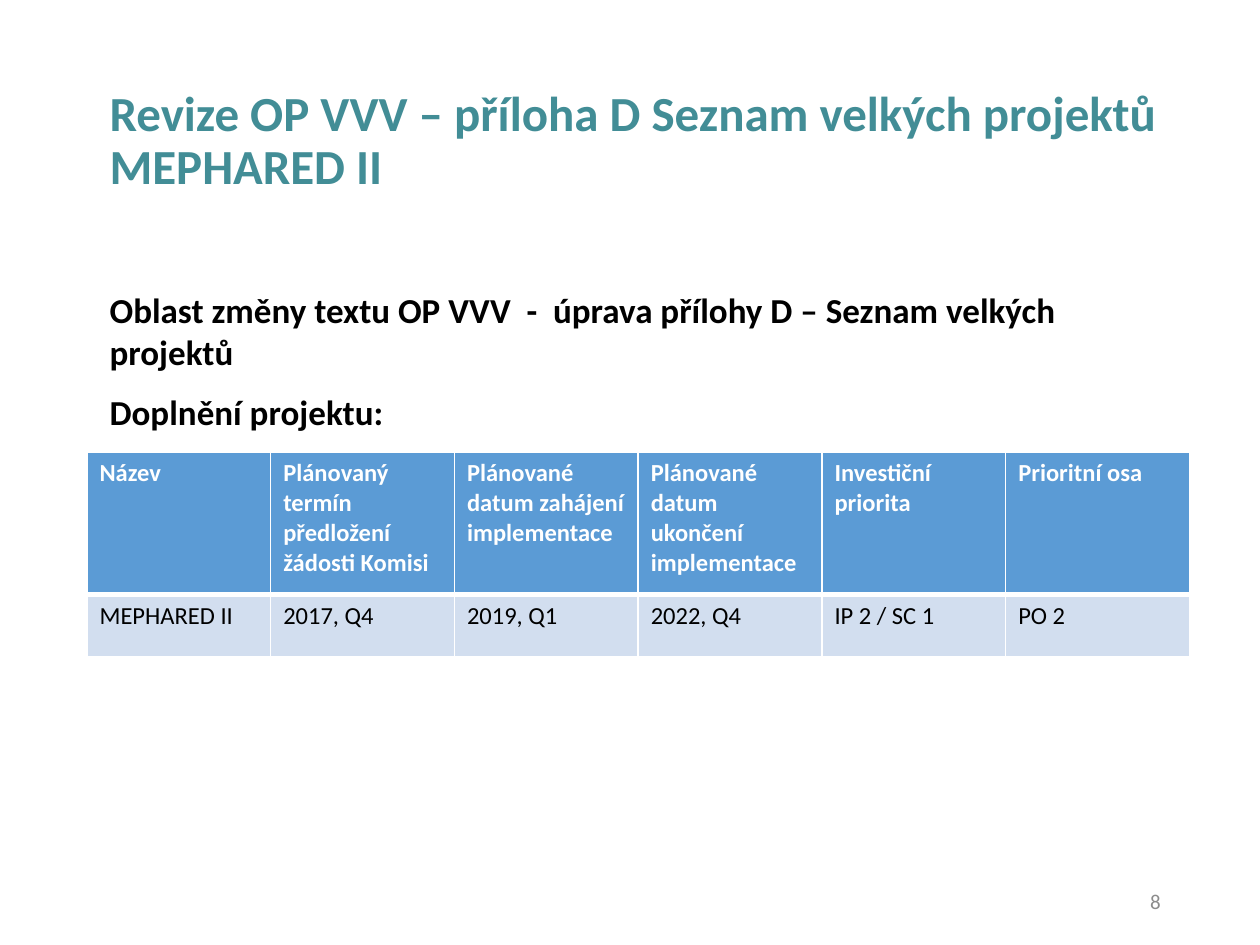
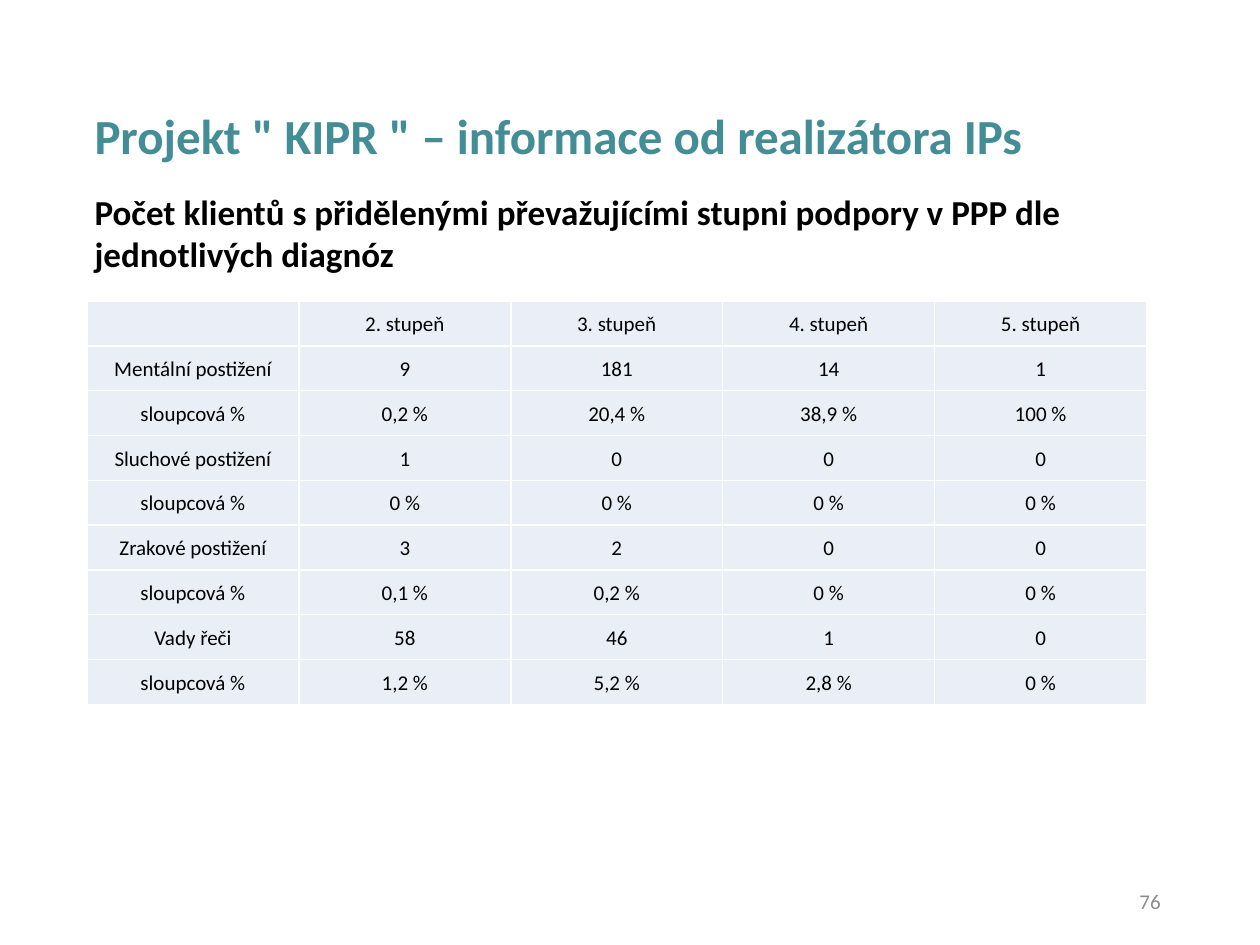
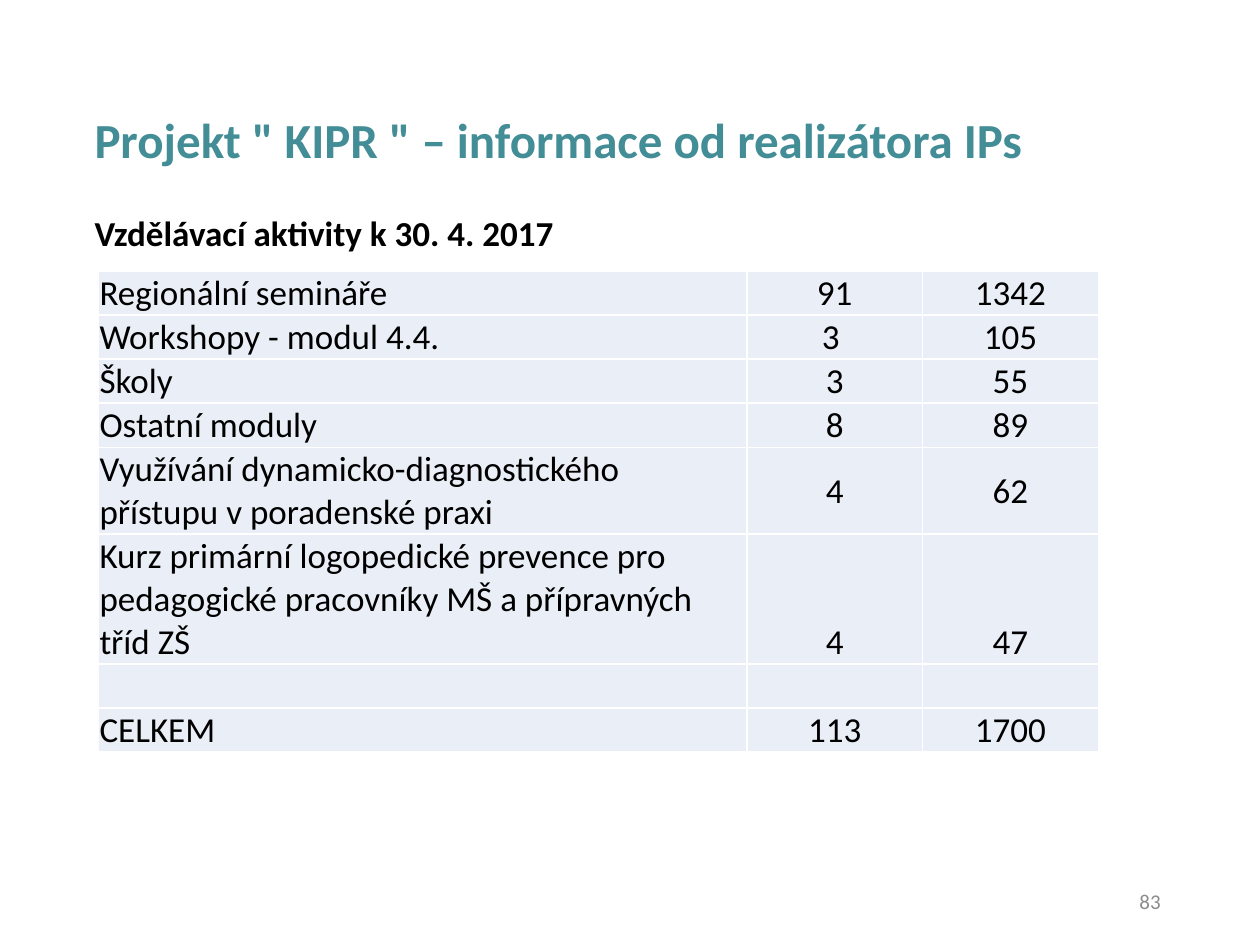
import pptx
import pptx.util
import pptx.dml.color
import pptx.enum.text
import pptx.oxml.ns
from lxml import etree

Inches = pptx.util.Inches
Pt = pptx.util.Pt
RGB = pptx.dml.color.RGBColor
ALIGN = pptx.enum.text.PP_ALIGN
ANCHOR = pptx.enum.text.MSO_ANCHOR
qn = pptx.oxml.ns.qn

FONT = "Calibri"
TEAL = RGB(0x42, 0x8D, 0x96)
GREY = RGB(0x8C, 0x8C, 0x8C)
BLACK = RGB(0, 0, 0)
WHITE = RGB(255, 255, 255)
BLUE = RGB(0x5B, 0x9B, 0xD5)
PALE = RGB(0xD2, 0xDE, 0xEF)
ICE = RGB(0xEA, 0xEF, 0xF7)

PLAN = [
    ["Název", "Plánovaný termín předložení žádosti Komisi",
     "Plánované datum zahájení implementace",
     "Plánované datum ukončení implementace",
     "Investiční priorita", "Prioritní osa"],
    ["MEPHARED II", "2017, Q4", "2019, Q1", "2022, Q4", "IP 2 / SC 1", "PO 2"],
]
SHARE = "sloupcová %"
COUNTS = [
    ["", "2. stupeň", "3. stupeň", "4. stupeň", "5. stupeň"],
    ["Mentální postižení", "9", "181", "14", "1"],
    [SHARE, "0,2 %", "20,4 %", "38,9 %", "100 %"],
    ["Sluchové postižení", "1", "0", "0", "0"],
    [SHARE, "0 %", "0 %", "0 %", "0 %"],
    ["Zrakové postižení", "3", "2", "0", "0"],
    [SHARE, "0,1 %", "0,2 %", "0 %", "0 %"],
    ["Vady řeči", "58", "46", "1", "0"],
    [SHARE, "1,2 %", "5,2 %", "2,8 %", "0 %"],
]
COURSES = [
    ["Regionální semináře", "91", "1342"],
    ["Workshopy - modul 4.4.", "3 ", "105"],
    ["Školy", "3", "55"],
    ["Ostatní moduly", "8", "89"],
    ["Využívání dynamicko-diagnostického přístupu v poradenské praxi", "4", "62"],
    ["Kurz primární logopedické prevence pro pedagogické pracovníky MŠ "
     "a přípravných tříd ZŠ", "4", "47"],
    ["", "", ""],
    ["CELKEM", "113", "1700"],
]
KIPR = 'Projekt " KIPR " – informace od realizátora IPs'

PAGES = [
    dict(title="Revize OP VVV – příloha D Seznam velkých projektů MEPHARED II",
         place=(0.81, 0.64, 8.5, 0.98), number="8",
         body=["Oblast změny textu OP VVV  -  úprava přílohy D – Seznam velkých projektů",
               "Doplnění projektu:"],
         area=(0.81, 2.23, 8.62, 4.52),
         grid=dict(data=PLAN, left=0.69, top=3.59, cols=[8.75 / 6] * 6,
                   rows=[1.13, 0.49], size=14, head=True, fill=PALE)),
    dict(title=KIPR, place=(0.69, 0.61, 8.62, 0.98), number="76",
         body=["Počet klientů s přidělenými převažujícími stupni podpory v PPP dle "
               "jednotlivých diagnóz"],
         area=(0.69, 1.45, 8.62, 4.52),
         grid=dict(data=COUNTS, left=0.69, top=2.39, cols=[8.41 / 5] * 5,
                   rows=[3.2 / 9] * 9, size=12, pads=(0.07,) * 4, lead=1.07,
                   aligns=[ALIGN.CENTER] * 5, anchor=ANCHOR.MIDDLE)),
    dict(title=KIPR, place=(0.69, 0.64, 8.62, 0.98), number="83",
         body=["Vzdělávací aktivity k 30. 4. 2017"],
         area=(0.69, 1.62, 8.62, 4.52),
         grid=dict(data=COURSES, left=0.78, top=2.15, cols=[5.15, 1.39, 1.4],
                   rows=[0.35] * 4 + [0.69, 1.03] + [0.35] * 2, size=20,
                   pads=(0.01, 0.01, 0.01, 0), anchor=ANCHOR.BOTTOM,
                   aligns=[ALIGN.LEFT, ALIGN.CENTER, ALIGN.CENTER],
                   middle={(4, 1), (4, 2), (5, 0)})),
]


def write(frame, *lines, size=20, color=BLACK, bold=False, align=ALIGN.LEFT,
          lead=1.0, gap=0):
    frame.word_wrap = True
    for i, line in enumerate(lines):
        para = frame.add_paragraph() if i else frame.paragraphs[0]
        para.alignment = align
        para.line_spacing = lead
        para.space_before = Pt(gap if i else 0)
        if not line:
            etree.SubElement(para._p, qn("a:endParaRPr"), sz=str(size * 100))
            continue
        run = para.add_run()
        run.text = line
        font = run.font
        font.name, font.size, font.bold = FONT, Pt(size), bold
        font.color.rgb = color


def inset(item, pads):
    (item.margin_left, item.margin_top,
     item.margin_right, item.margin_bottom) = map(Inches, pads)


def border(cell, base):
    props = cell._tc.get_or_add_tcPr()
    for side, width in zip("LRTB", (1, 1, 1, base)):
        line = etree.SubElement(props, qn("a:ln" + side), w=str(Pt(width)))
        fill = etree.SubElement(line, qn("a:solidFill"))
        etree.SubElement(fill, qn("a:srgbClr"), val=str(WHITE))


def tabulate(slide, data, left, top, cols, rows, size, head=False, fill=ICE,
             pads=(0.1, 0.05, 0.1, 0.05), lead=1.0, aligns=None,
             anchor=ANCHOR.TOP, middle=()):
    box = map(Inches, (left, top, sum(cols), sum(rows)))
    table = slide.shapes.add_table(len(rows), len(cols), *box).table
    table.first_row = head
    table.horz_banding = False
    for col, width in zip(table.columns, cols):
        col.width = Inches(width)
    for r, (row, high) in enumerate(zip(data, rows)):
        table.rows[r].height = Inches(high)
        top_row = head and r == 0
        for c, text in enumerate(row):
            cell = table.cell(r, c)
            border(cell, 3 if top_row else 1)
            cell.fill.solid()
            cell.fill.fore_color.rgb = BLUE if top_row else fill
            inset(cell, pads)
            cell.vertical_anchor = ANCHOR.MIDDLE if (r, c) in middle else anchor
            write(cell.text_frame, text, size=size, lead=lead, bold=top_row,
                  color=WHITE if top_row else BLACK,
                  align=aligns[c] if aligns else ALIGN.LEFT)


def build(deck, page):
    slide = deck.slides.add_slide(deck.slide_layouts[5])
    title = slide.shapes.title
    title.left, title.top, title.width, title.height = map(Inches, page["place"])
    frame = title.text_frame
    frame.auto_size = pptx.enum.text.MSO_AUTO_SIZE.NONE
    frame.vertical_anchor = ANCHOR.MIDDLE
    inset(frame, (0.06,) * 4)
    write(frame, page["title"], size=28, color=TEAL, bold=True, lead=0.9)

    body = slide.shapes.add_textbox(*map(Inches, page["area"])).text_frame
    inset(body, (0.06,) * 4)
    write(body, *page["body"], bold=True, gap=10)

    foot = slide.shapes.add_textbox(*map(Inches, (7.06, 6.95, 2.25, 0.4))).text_frame
    foot.vertical_anchor = ANCHOR.MIDDLE
    write(foot, page["number"], size=12, color=GREY, align=ALIGN.RIGHT)

    tabulate(slide, **page["grid"])


def main():
    deck = pptx.Presentation()
    deck.slide_width, deck.slide_height = Inches(10), Inches(7.5)
    for page in PAGES:
        build(deck, page)
    deck.save("out.pptx")


if __name__ == "__main__":
    main()
